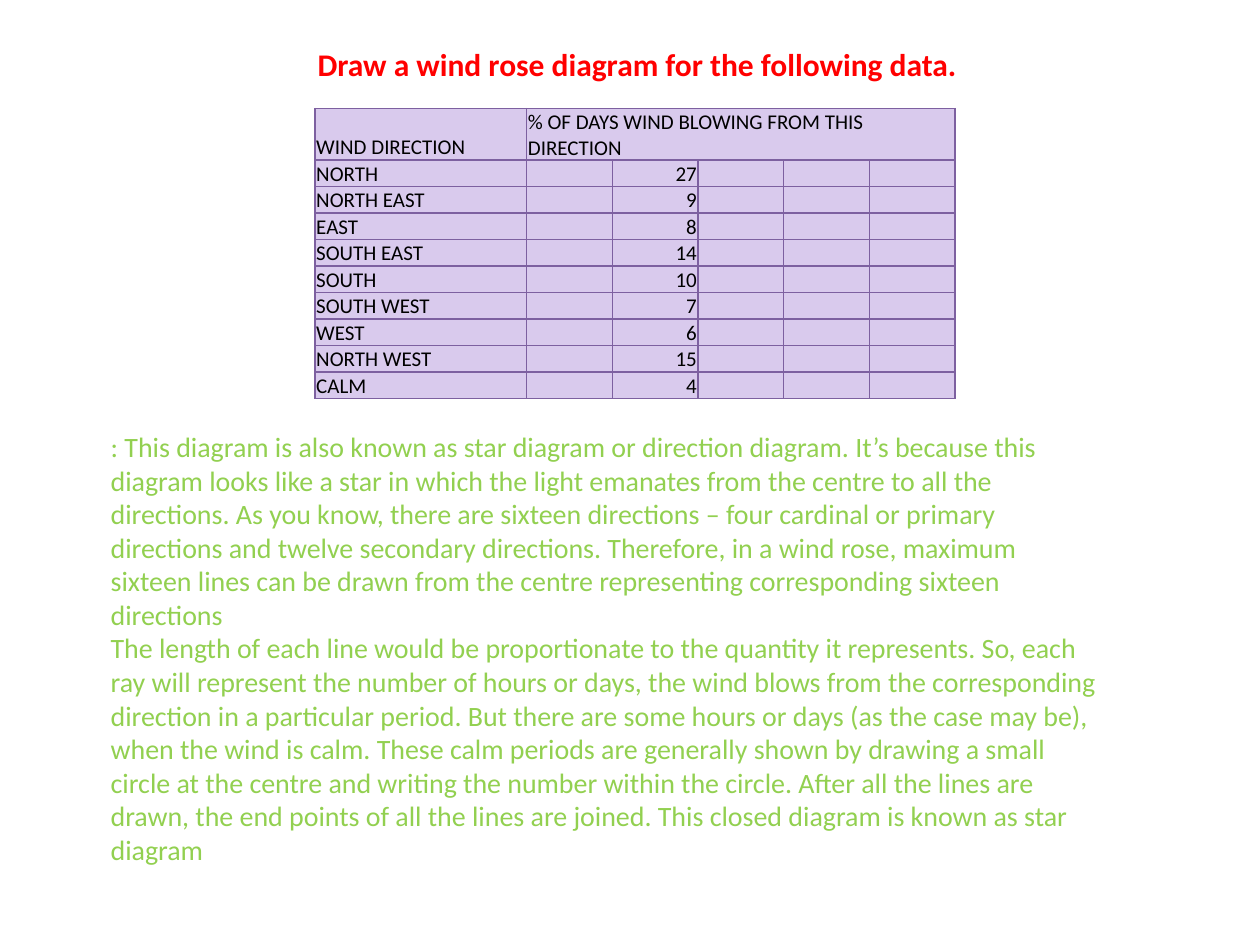
from lxml.etree import SubElement
from pptx import Presentation
from pptx.dml.color import RGBColor
from pptx.enum.text import MSO_ANCHOR as ANCHOR, MSO_AUTO_SIZE as AUTO, PP_ALIGN as ALIGN
from pptx.oxml.ns import qn
from pptx.util import Inches, Pt

RED = RGBColor(0xFF, 0x00, 0x00)
GREEN = RGBColor(0x92, 0xD0, 0x50)
BLACK = RGBColor(0x00, 0x00, 0x00)
LILAC = RGBColor(0xD9, 0xCA, 0xED)
PURPLE = RGBColor(0x7D, 0x60, 0xA0)

WINDS = [("NORTH", 27), ("NORTH EAST", 9), ("EAST", 8), ("SOUTH EAST", 14), ("SOUTH", 10),
         ("SOUTH WEST", 7), ("WEST", 6), ("NORTH WEST", 15), ("CALM", 4)]
NOTES = [
    ": This diagram is also known as star diagram or direction diagram. It’s because this "
    "diagram looks like a star in which the light emanates from the centre to all the "
    "directions. As you know, there are sixteen directions – four cardinal or primary "
    "directions and twelve secondary directions. Therefore, in a wind rose, maximum sixteen "
    "lines can be drawn from the centre representing corresponding sixteen directions",
    "The length of each line would be proportionate to the quantity it represents. So, each "
    "ray will represent the number of hours or days, the wind blows from the corresponding "
    "direction in a particular period. But there are some hours or days (as the case may be), "
    "when the wind is calm. These calm periods are generally shown by drawing a small circle "
    "at the centre and writing the number within the circle. After all the lines are drawn, "
    "the end points of all the lines are joined. This closed diagram is known as star diagram",
]


def write(p, text, size, color, bold=False, align=ALIGN.LEFT):
    p.alignment = align
    r = p.add_run()
    r.text = text
    r.font.name, r.font.size, r.font.bold = "Calibri", Pt(size), bold
    r.font.color.rgb = color


def style_cell(cell):
    cell.fill.solid()
    cell.fill.fore_color.rgb = LILAC
    cell.vertical_anchor = ANCHOR.BOTTOM
    cell.margin_left = cell.margin_right = cell.margin_top = Inches(0.01)
    cell.margin_bottom = 0
    # Borders come before the fill in the cell properties
    tcPr = cell._tc.get_or_add_tcPr()
    for i, side in enumerate(("a:lnL", "a:lnR", "a:lnT", "a:lnB")):
        ln = SubElement(tcPr, qn(side), w=str(Pt(0.75)))
        SubElement(SubElement(ln, qn("a:solidFill")), qn("a:srgbClr"), val=str(PURPLE))
        tcPr.insert(i, ln)
    # Empty cells keep the text size, so rows stay low
    SubElement(cell.text_frame.paragraphs[0]._p, qn("a:endParaRPr"), sz="1200")


prs = Presentation()
prs.slide_width, prs.slide_height = Inches(10), Inches(7.5)
s = prs.slides.add_slide(prs.slide_layouts[5])

# Title
title = s.shapes.title
title.left, title.top, title.width, title.height = map(Inches, (2.42, 0.31, 5.78, 0.4))
tf = title.text_frame
tf.word_wrap, tf.auto_size, tf.vertical_anchor = True, AUTO.SHAPE_TO_FIT_TEXT, ANCHOR.TOP
write(tf.paragraphs[0], "Draw a wind rose diagram for the following data.", 18, RED, bold=True)

# Wind table: one label column and five equal columns
frame = s.shapes.add_table(len(WINDS) + 1, 6, Inches(2.5), Inches(0.86), Inches(5.08), Inches(1.97))
table = frame.table
table.first_row = table.horz_banding = False
for i, col in enumerate(table.columns):
    col.width = Inches(0.68 if i else 1.68)
for i, row in enumerate(table.rows):
    row.height = Inches(0.18 if i else 0.35)
table.cell(0, 1).merge(table.cell(0, 5))
for cell in table.iter_cells():
    style_cell(cell)

entries = [(0, 0, "WIND DIRECTION"), (0, 1, "% OF DAYS WIND BLOWING FROM THIS DIRECTION")]
for i, (wind, days) in enumerate(WINDS, 1):
    entries += [(i, 0, wind), (i, 2, str(days))]
for i, j, text in entries:
    write(table.cell(i, j).text_frame.paragraphs[0], text, 12, BLACK,
          align=ALIGN.RIGHT if j == 2 else ALIGN.LEFT)

# Explanation
box = s.shapes.add_textbox(Inches(0.78), Inches(3.36), Inches(8.05), Inches(3.6))
tf = box.text_frame
tf.word_wrap, tf.auto_size = True, AUTO.SHAPE_TO_FIT_TEXT
for i, note in enumerate(NOTES):
    write(tf.add_paragraph() if i else tf.paragraphs[0], note, 16, GREEN)

prs.save("out.pptx")
